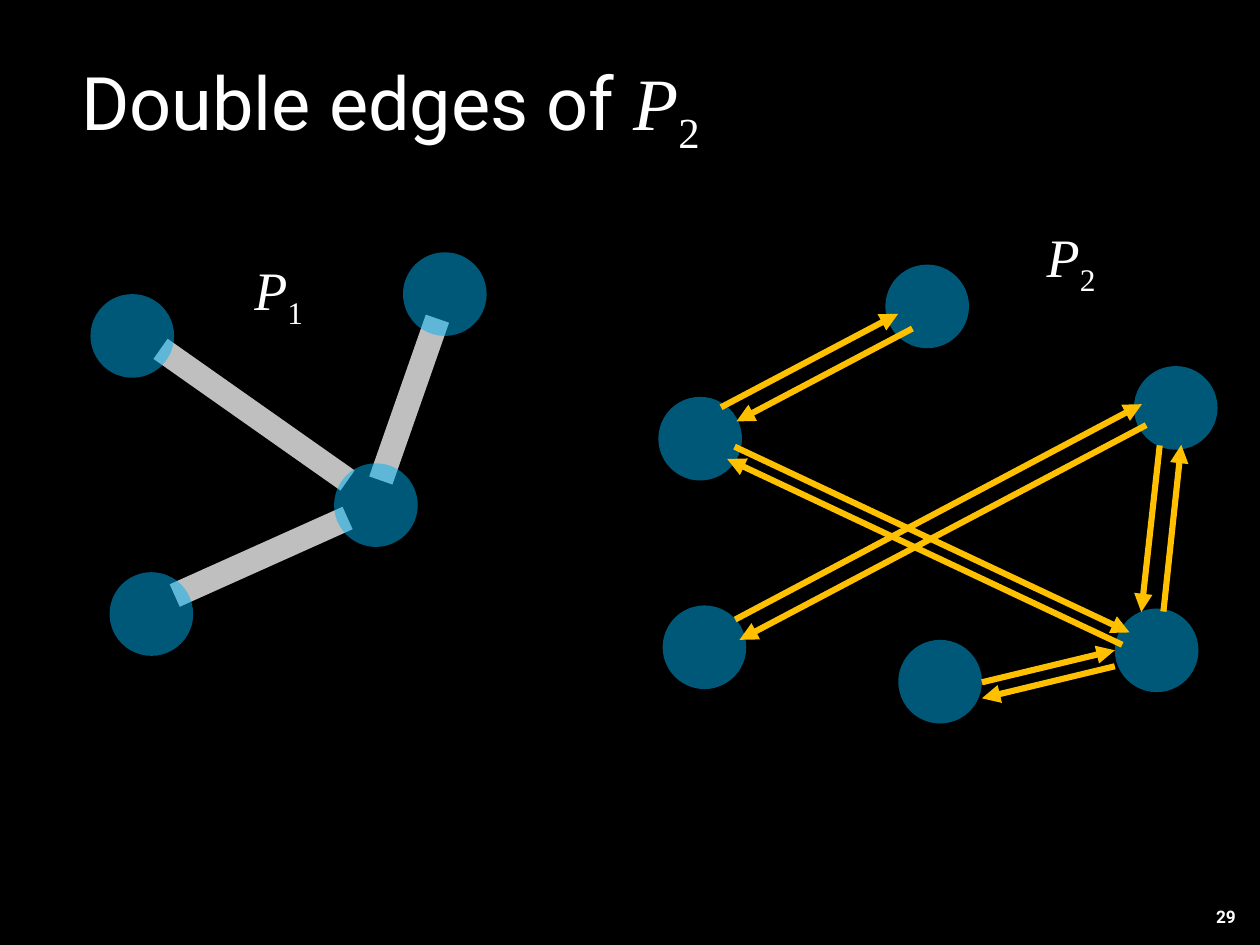
"""Builds the slide on the double edges of the graph P2."""
from lxml.etree import SubElement as Sub
from pptx import Presentation
from pptx.dml.color import RGBColor
from pptx.enum.shapes import MSO_CONNECTOR as Conn, MSO_SHAPE as Shape
from pptx.enum.text import MSO_ANCHOR as Anchor, MSO_AUTO_SIZE as Auto, PP_ALIGN as Align
from pptx.oxml.ns import qn
from pptx.util import Pt

BLACK = RGBColor(0x00, 0x00, 0x00)
WHITE = RGBColor(0xFF, 0xFF, 0xFF)
BLUE = RGBColor(0x00, 0xB0, 0xF0)
GREY = RGBColor(0xBF, 0xBF, 0xBF)
GOLD = RGBColor(0xFF, 0xC0, 0x00)
SANS = "Roboto"
SERIF = "Times New Roman"
NODE = 68

NODES = [
    (89, 465), (73.5, 239), (327.5, 205), (271.5, 376.5),
    (719.5, 215), (921.5, 297.5), (538.5, 492),
    (535, 322.5), (730, 520), (906, 494.5),
]
BARS = [
    (130.5, 283.5, 282.5, 390.5),
    (282.5, 421, 142, 484),
    (355.5, 259, 309.5, 390.5),
]
ARROWS = [
    (586, 331, 730, 255), (741.5, 267, 598.5, 342.5),
    (597.5, 503.5, 928, 328.5), (931.5, 345.5, 601, 520),
    (912, 524, 591, 373), (597, 363, 918, 514),
    (798, 554.5, 906, 528.5), (906, 541.5, 798, 567.5),
    (942.5, 362, 927.5, 497.5), (945.5, 497, 960, 361.5),
]


class Board:
    def __init__(self, slide):
        self.slide = slide
        self.shapes = slide.shapes
        fill = slide.background.fill
        fill.solid()
        fill.fore_color.rgb = BLACK

    def style(self, para, size, align):
        para.alignment = align
        para.font.size = Pt(size)
        para.font.color.rgb = WHITE

    def symbol(self, para, index):
        main, sub = para.add_run(), para.add_run()
        main.text, sub.text = "P", index
        main.font.italic, sub.font.italic = True, False
        sub.font._element.set("baseline", "-25000")
        return main, sub

    def title(self, text, index):
        box = self.shapes.title
        box.left, box.top, box.width, box.height = Pt(62), Pt(20), Pt(900), Pt(134)
        frame = box.text_frame
        frame.auto_size = Auto.NONE
        frame.vertical_anchor = Anchor.MIDDLE
        frame.margin_left = frame.margin_right = Pt(4)
        frame.margin_top = frame.margin_bottom = Pt(4)
        para = frame.paragraphs[0]
        self.style(para, 60, Align.LEFT)
        lead = para.add_run()
        lead.text = text
        lead.font.name = SANS
        for run in self.symbol(para, index):
            run.font.name = SERIF

    def box(self, x, y, w, h):
        frame = self.shapes.add_textbox(Pt(x), Pt(y), Pt(w), Pt(h)).text_frame
        frame.word_wrap = False
        return frame

    def label(self, x, y, index):
        frame = self.box(x, y, 56, 60.5)
        frame.auto_size = Auto.SHAPE_TO_FIT_TEXT
        para = frame.paragraphs[0]
        self.style(para, 44, Align.CENTER)
        para.font.name = SERIF
        self.symbol(para, index)

    def number(self, text):
        frame = self.box(987, 733, 24.5, 25)
        frame.margin_left = 0
        para = frame.paragraphs[0]
        self.style(para, 14, Align.RIGHT)
        para.font.name = SANS
        para.font.bold = True
        para.add_run().text = text

    def node(self, x, y):
        disc = self.shapes.add_shape(Shape.OVAL, Pt(x), Pt(y), Pt(NODE), Pt(NODE))
        disc.shadow.inherit = False
        disc.fill.solid()
        disc.fill.fore_color.rgb = BLUE
        disc.line.fill.background()
        tint = disc._element.spPr.find(qn("a:solidFill"))[0]
        Sub(tint, qn("a:alpha")).set("val", "50000")

    def edge(self, ends, color, width, arrow=False):
        link = self.shapes.add_connector(Conn.STRAIGHT, *map(Pt, ends))
        link.line.color.rgb = color
        link.line.width = Pt(width)
        if arrow:
            Sub(link.line._get_or_add_ln(), qn("a:tailEnd")).set("type", "triangle")
        Sub(link._element.spPr, qn("a:effectLst"))


def main():
    deck = Presentation()
    deck.slide_width, deck.slide_height = Pt(1024), Pt(768)
    board = Board(deck.slides.add_slide(deck.slide_layouts[5]))
    board.number("29")
    board.title("Double edges of ", "2")
    for ends in BARS:
        board.edge(ends, GREY, 20)
    for spot in NODES:
        board.node(*spot)
    board.label(198.5, 205, "1")
    board.label(842.5, 178, "2")
    for ends in ARROWS:
        board.edge(ends, GOLD, 5, arrow=True)
    deck.save("out.pptx")


if __name__ == "__main__":
    main()
